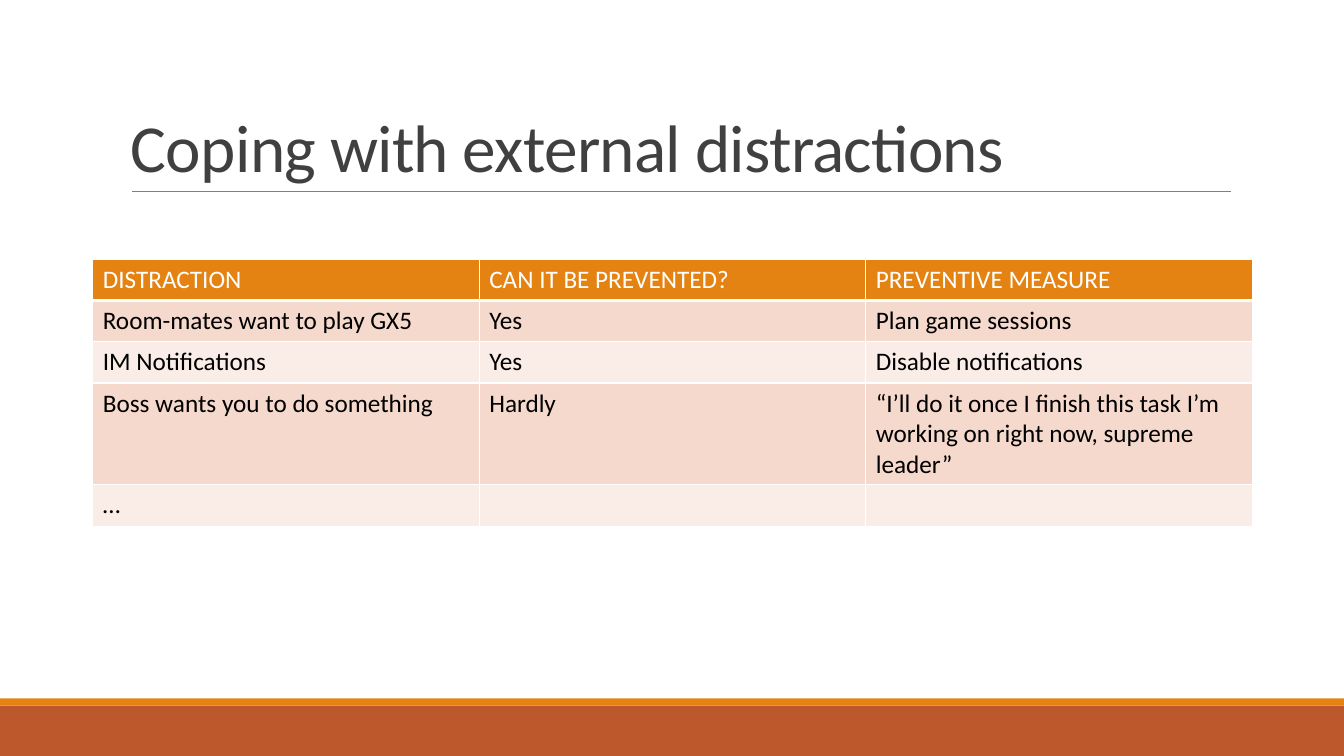
from lxml import etree
from pptx import Presentation
from pptx.dml.color import RGBColor
from pptx.enum.shapes import MSO_CONNECTOR, MSO_SHAPE
from pptx.enum.text import MSO_ANCHOR
from pptx.oxml.ns import qn
from pptx.util import Inches, Pt

RECT = MSO_SHAPE.RECTANGLE
STRAIGHT = MSO_CONNECTOR.STRAIGHT
BOTTOM = MSO_ANCHOR.BOTTOM
FONT = "Calibri"
ORANGE = "E48312"
BANDS = ["FAEDE7", "F5D9CC"]


def rgb(value):
    return RGBColor.from_string(value)


def add_border(cell, side, width):
    ln = etree.Element(qn("a:" + side), w=str(Pt(width)))
    fill = etree.SubElement(ln, qn("a:solidFill"))
    etree.SubElement(fill, qn("a:srgbClr"), val="FFFFFF")
    cell._tc.get_or_add_tcPr().append(ln)


prs = Presentation()
prs.slide_width, prs.slide_height = Inches(13.33), Inches(7.5)
s = prs.slides.add_slide(prs.slide_layouts[6])

# Footer bands
for top, height, color in [(7, 0.5, "BD582C"), (6.93, 0.07, ORANGE)]:
    sp = s.shapes.add_shape(RECT, 0, Inches(top), prs.slide_width, Inches(height))
    sp.shadow.inherit = False
    sp.fill.solid()
    sp.fill.fore_color.rgb = rgb(color)
    sp.line.fill.background()

# Rule under the title
rule = s.shapes.add_connector(STRAIGHT, Inches(1.31), Inches(1.9), Inches(12.21), Inches(1.9))
rule.line.color.rgb = rgb("808080")
rule.line.width = Pt(0.5)
etree.SubElement(rule._element.spPr, qn("a:effectLst"))

# Title
title = s.shapes.add_textbox(Inches(1.2), Inches(0.31), Inches(11), Inches(1.59))
tf = title.text_frame
tf.word_wrap = True
tf.vertical_anchor = BOTTOM
p = tf.paragraphs[0]
p.line_spacing = 0.85
r = p.add_run()
r.text = "Coping with external distractions"
r.font.name = FONT
r.font.size = Pt(48)
r.font.color.rgb = rgb("404040")
r.font._element.set("spc", "-50")

# Table of distractions
rows = [
    ["DISTRACTION", "CAN IT BE PREVENTED?", "PREVENTIVE MEASURE"],
    ["Room-mates want to play GX5", "Yes", "Plan game sessions"],
    ["IM Notifications", "Yes", "Disable notifications"],
    ["Boss wants you to do something", "Hardly",
     "“I’ll do it once I finish this task I’m working on right now, supreme leader”"],
    ["…", "", ""],
]
heights = [0.41, 0.41, 0.41, 1.01, 0.41]
frame = s.shapes.add_table(len(rows), 3, Inches(0.92), Inches(2.57),
                           Inches(11.5), Inches(sum(heights)))
table = frame.table
for i, (texts, height) in enumerate(zip(rows, heights)):
    table.rows[i].height = Inches(height)
    header = i == 0
    for j, text in enumerate(texts):
        cell = table.cell(i, j)
        cell.text = text
        for side in ("lnL", "lnR", "lnT", "lnB"):
            add_border(cell, side, 3 if header and side == "lnB" else 1)
        cell.fill.solid()
        cell.fill.fore_color.rgb = rgb(ORANGE if header else BANDS[i % 2])
        p = cell.text_frame.paragraphs[0]
        p.font.name = FONT
        p.font.size = Pt(18)
        p.font.bold = False
        p.font.color.rgb = rgb("FFFFFF" if header else "000000")

prs.save("out.pptx")
